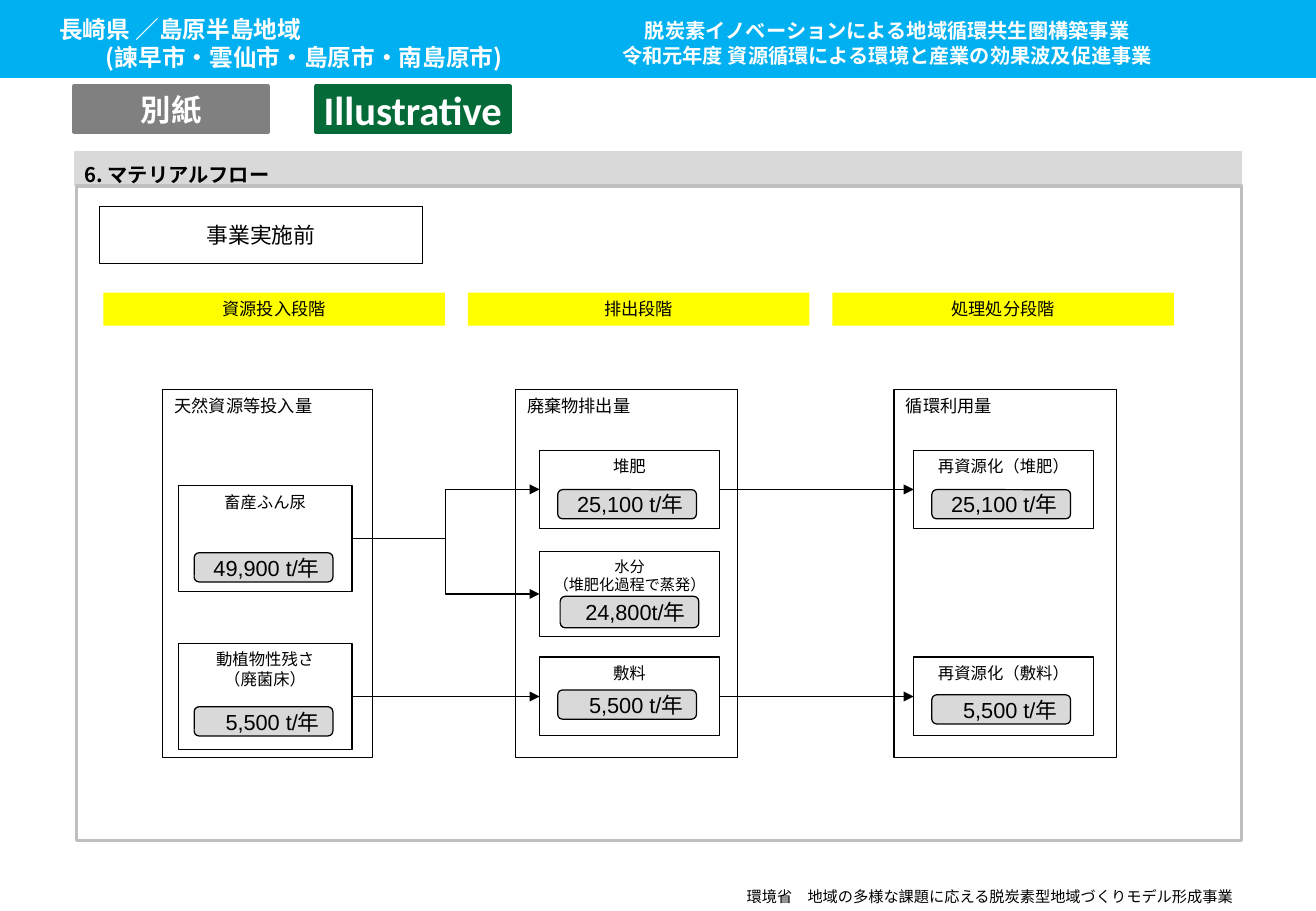
from lxml.etree import SubElement
from pptx import Presentation
from pptx.dml.color import RGBColor
from pptx.enum.shapes import MSO_CONNECTOR, MSO_SHAPE
from pptx.enum.text import MSO_ANCHOR, MSO_AUTO_SIZE, PP_ALIGN
from pptx.oxml.ns import qn
from pptx.util import Cm, Pt

COLORS = {
    "sky": "00B0F0", "gray": "808080", "green": "046A38", "light": "D9D9D9",
    "frame": "BFBFBF", "yellow": "FFFF00", "black": "000000", "white": "FFFFFF",
}
JAPANESE = "Noto Sans CJK JP"
TOP, MIDDLE = MSO_ANCHOR.TOP, MSO_ANCHOR.MIDDLE
LEFT, CENTER, RIGHT = PP_ALIGN.LEFT, PP_ALIGN.CENTER, PP_ALIGN.RIGHT
NO_MARGIN = {"margin_left": 0, "margin_top": 0, "margin_right": 0, "margin_bottom": 0}
HEADER_FRAME = NO_MARGIN | {"margin_top": Cm(0.2)}


def write(shape, text, size, font="Arial", color="black", bold=False,
          align=CENTER, anchor=TOP, **frame_format):
    """Fill a shape with formatted text, one paragraph per line."""
    frame = shape.text_frame
    frame.text = text
    frame_format = {"word_wrap": True, "auto_size": MSO_AUTO_SIZE.NONE,
                    "vertical_anchor": anchor} | frame_format
    for name, value in frame_format.items():
        setattr(frame, name, value)
    for paragraph in frame.paragraphs:
        paragraph.alignment = align
        run_font = paragraph.runs[0].font
        for name, value in {"size": Pt(size), "bold": bold, "name": font}.items():
            setattr(run_font, name, value)
        run_font.color.rgb = RGBColor.from_string(COLORS[color])
        properties = paragraph.runs[0]._r.get_or_add_rPr()
        SubElement(properties, qn("a:ea"), typeface=JAPANESE)


def add_box(left, top, width, height, fill=None, line="black", weight=0.75,
            kind=MSO_SHAPE.RECTANGLE):
    shape = slide.shapes.add_shape(kind, Cm(left), Cm(top), Cm(width), Cm(height))
    shape.shadow.inherit = False
    if fill:
        shape.fill.solid()
        shape.fill.fore_color.rgb = RGBColor.from_string(COLORS[fill])
    else:
        shape.fill.background()
    if line:
        shape.line.color.rgb = RGBColor.from_string(COLORS[line])
        shape.line.width = Pt(weight)
    else:
        shape.line.fill.background()
    return shape


presentation = Presentation()
presentation.slide_width, presentation.slide_height = Cm(27.51), Cm(19.05)
slide = presentation.slides.add_slide(presentation.slide_layouts[5])

# Section title and frame
title = slide.shapes.title
title_place = {"left": 1.57, "top": 3.18, "width": 24.38, "height": 0.69}
for name, value in title_place.items():
    setattr(title, name, Cm(value))
title.fill.solid()
title.fill.fore_color.rgb = RGBColor.from_string(COLORS["light"])
title.line.color.rgb = RGBColor.from_string(COLORS["light"])
title.line.width = Pt(0.75)
write(title, "6. マテリアルフロー", 12, JAPANESE, bold=True, align=LEFT, anchor=MIDDLE,
      **NO_MARGIN | {"margin_left": Cm(0.2)})
title_paragraph = title.text_frame.paragraphs[0]
title_paragraph.line_spacing = 1.5
title_paragraph.space_before = Pt(10)
add_box(1.6, 3.89, 24.36, 13.69, line="frame", weight=2)

# Header band, footer and tags
add_box(0, 0, 27.51, 1.63, "sky", None)
plain_texts = [
    (1.24, 0, 9.27, 1.6, "長崎県 ／島原半島地域\n(諫早市・雲仙市・島原市・南島原市)",
     14, "white", True, LEFT),
    (10.64, 0, 15.82, 1.6,
     "脱炭素イノベーションによる地域循環共生圏構築事業\n"
     "令和元年度 資源循環による環境と産業の効果波及促進事業",
     12, "white", True, CENTER),
    (15.47, 18.24, 10.29, 0.81,
     "環境省　地域の多様な課題に応える脱炭素型地域づくりモデル形成事業",
     9, "black", False, RIGHT),
]
for left, top, width, height, text, size, color, bold, align in plain_texts:
    text_box = slide.shapes.add_textbox(Cm(left), Cm(top), Cm(width), Cm(height))
    write(text_box, text, size, JAPANESE, color, bold, align, MIDDLE, **HEADER_FRAME)
    if align == LEFT:
        text_box.text_frame.paragraphs[1].alignment = RIGHT

for left, text, size, font, color in [
    (1.55, "別紙", 18, "Arial", "gray"),
    (6.6, "Illustrative", 24, "Calibri", "green"),
]:
    tag = add_box(left, 1.8, 4.06, 0.97, color, color, 2)
    write(tag, text, size, font, "white", True, anchor=MIDDLE, **NO_MARGIN)

write(add_box(2.08, 4.32, 6.76, 1.19), "事業実施前", 12.9, anchor=MIDDLE)

# Stages and their columns
for index, stage in enumerate(["資源投入段階", "排出段階", "処理処分段階"]):
    write(add_box(2.16 + 7.62 * index, 6.12, 7.14, 0.69, "yellow", None), stage, 10.2)

for left, width, heading in [
    (3.4, 4.39, "天然資源等投入量"),
    (10.77, 4.65, "廃棄物排出量"),
    (18.69, 4.65, "循環利用量"),
]:
    write(add_box(left, 8.15, width, 7.7), heading, 10.2, align=LEFT)

# Materials: key, box, label, label size, amount, amount left, top and height
materials = [
    ("manure", (3.73, 10.16, 3.63, 2.21), "畜産ふん尿", 9.7,
     "49,900 t/年", 4.06, 11.56, 0.61),
    ("residue", (3.73, 13.46, 3.63, 2.21), "動植物性残さ\n（廃菌床）", 9.7,
     "5,500 t/年", 4.06, 14.78, 0.61),
    ("compost", (11.28, 9.42, 3.76, 1.63), "堆肥", 9.7,
     "25,100 t/年", 11.66, 10.24, 0.61),
    ("water", (11.28, 11.53, 3.76, 1.78), "水分\n（堆肥化過程で蒸発）", 9,
     "24,800t/年", 11.71, 12.47, 0.66),
    ("bedding", (11.28, 13.74, 3.76, 1.65), "敷料", 9.7,
     "5,500 t/年", 11.66, 14.43, 0.61),
    ("reused compost", (19.1, 9.42, 3.76, 1.63), "再資源化（堆肥）", 9.7,
     "25,100 t/年", 19.48, 10.24, 0.61),
    ("reused bedding", (19.1, 13.74, 3.76, 1.65), "再資源化（敷料）", 9.7,
     "5,500 t/年", 19.48, 14.53, 0.61),
]
boxes = {}
for key, place, label, size, amount, left, top, height in materials:
    boxes[key] = add_box(*place)
    write(boxes[key], label, size)
    pill = add_box(left, top, 2.9, height, "light", kind=MSO_SHAPE.ROUNDED_RECTANGLE)
    write(pill, amount, 12.9, align=RIGHT, anchor=MIDDLE, margin_left=0)

# Flows
for source, target, kind in [
    ("manure", "compost", MSO_CONNECTOR.ELBOW),
    ("manure", "water", MSO_CONNECTOR.ELBOW),
    ("residue", "bedding", MSO_CONNECTOR.STRAIGHT),
    ("bedding", "reused bedding", MSO_CONNECTOR.STRAIGHT),
    ("compost", "reused compost", MSO_CONNECTOR.STRAIGHT),
]:
    flow = slide.shapes.add_connector(kind, 0, 0, 0, 0)
    flow.begin_connect(boxes[source], 3)
    flow.end_connect(boxes[target], 1)
    flow.line.color.rgb = RGBColor.from_string(COLORS["black"])
    flow.line.width = Pt(0.75)
    SubElement(flow.line._get_or_add_ln(), qn("a:tailEnd"), type="triangle")
    SubElement(flow._element.spPr, qn("a:effectLst"))

presentation.save("out.pptx")
